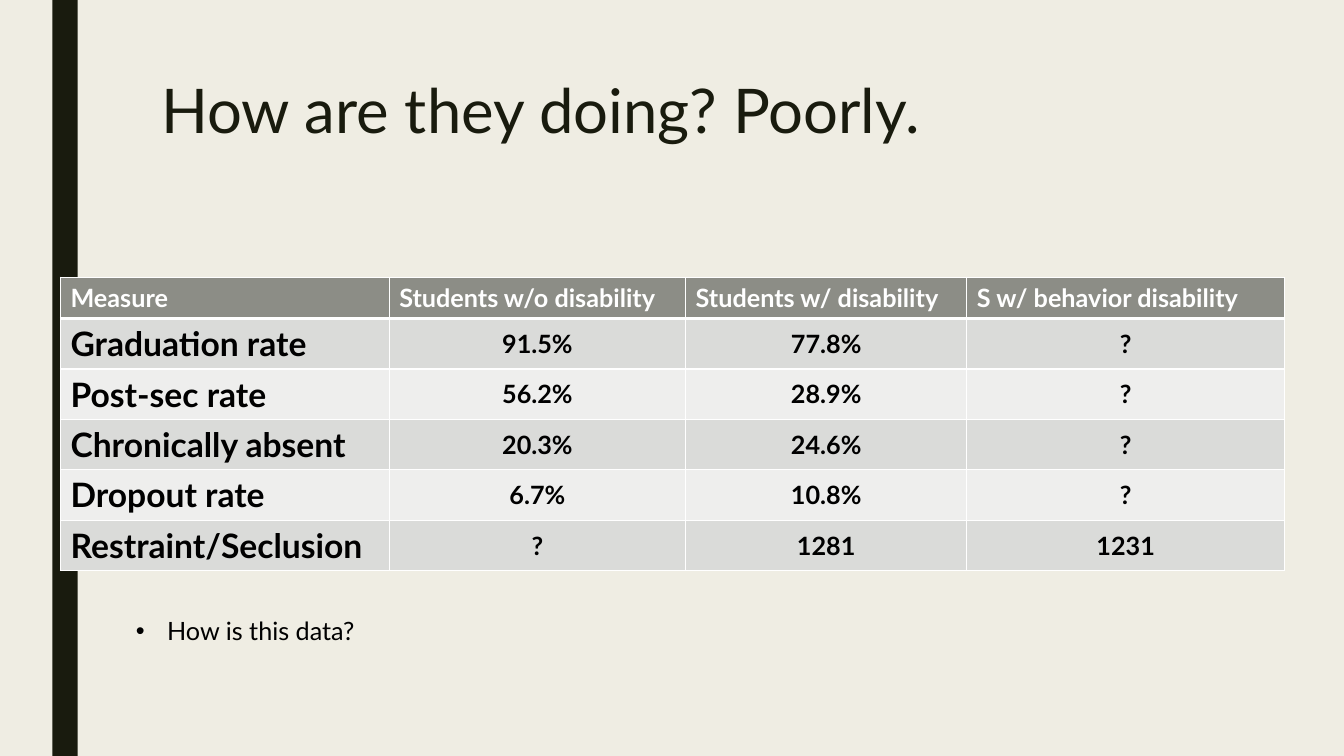
import pptx
import pptx.dml.color
import pptx.enum.shapes
import pptx.enum.text
import pptx.oxml
import pptx.oxml.ns
import pptx.util
from pptx.util import Inches

ANCHOR = pptx.enum.text.MSO_ANCHOR
ALIGN = pptx.enum.text.PP_ALIGN
INK = "191B0E"


def color(hex_string):
    return pptx.dml.color.RGBColor.from_string(hex_string)


def format_text(para, size, hex_string, bold=False):
    for span in para.runs:
        span.font.name = "Lato"
        span.font.size = pptx.util.Pt(size)
        span.font.bold = bold
        span.font.color.rgb = color(hex_string)


deck = pptx.Presentation()
deck.slide_width = Inches(13.33)
deck.slide_height = Inches(7.5)
page = deck.slides.add_slide(deck.slide_layouts[5])
page.background.fill.solid()
page.background.fill.fore_color.rgb = color("EFEDE3")

# Side bar
bar = page.shapes.add_shape(
    pptx.enum.shapes.MSO_SHAPE.RECTANGLE, Inches(0.52), 0, Inches(0.25), deck.slide_height)
bar.shadow.inherit = False
bar.fill.solid()
bar.fill.fore_color.rgb = color(INK)
bar.line.fill.background()

# Title
title = page.shapes.title
title.left, title.top = Inches(1.5), Inches(0.75)
title.width, title.height = Inches(10.5), Inches(1.62)
title.text_frame.text = "How are they doing? Poorly."
title.text_frame.vertical_anchor = ANCHOR.TOP
para = title.text_frame.paragraphs[0]
para.alignment = ALIGN.LEFT
para.line_spacing = 0.89
format_text(para, 44, INK)

# Table
rows = [
    ["Measure", "Students w/o disability", "Students w/ disability", "S w/ behavior disability"],
    ["Graduation rate", "91.5%", "77.8%", "?"],
    ["Post-sec rate", "56.2%", "28.9%", "?"],
    ["Chronically absent", "20.3%", "24.6%", "?"],
    ["Dropout rate", "6.7%", "10.8%", "?"],
    ["Restraint/Seclusion", "?", "1281", "1231"],
]
column_widths = [3.26, 2.94, 2.79, 3.15]
table = page.shapes.add_table(
    len(rows), len(column_widths), Inches(0.6), Inches(2.75), Inches(12.14), Inches(2.91)).table
for column, width in zip(table.columns, column_widths):
    column.width = Inches(width)

for r, row in enumerate(rows):
    is_header = r == 0
    table.rows[r].height = Inches(0.41 if is_header else 0.5)
    for c, text in enumerate(row):
        cell = table.cell(r, c)
        cell.text = text
        cell.fill.solid()
        cell.fill.fore_color.rgb = color("8C8D86" if is_header else ("EEEEED", "DADBD9")[r % 2])
        para = cell.text_frame.paragraphs[0]
        is_label = c == 0 and not is_header
        format_text(para, 24 if is_label else 18, "FFFFFF" if is_header else "000000", bold=True)
        if c > 0 and not is_header:
            para.alignment = ALIGN.CENTER
            cell.vertical_anchor = ANCHOR.MIDDLE

        # The rule under the header is three points wide, all others one
        properties = cell._tc.get_or_add_tcPr()
        for position, side in enumerate("LRTB"):
            thick = (r, side) in [(0, "B"), (1, "T")]
            border = pptx.oxml.parse_xml(
                f'<a:ln{side} {pptx.oxml.ns.nsdecls("a")} w="{pptx.util.Pt(3 if thick else 1)}">'
                '<a:solidFill><a:srgbClr val="FFFFFF"/></a:solidFill>'
                f'</a:ln{side}>')
            properties.insert(position, border)

# Question below the table
question = page.shapes.add_textbox(Inches(1.25), Inches(6.06), Inches(4.62), Inches(0.4))
question.text_frame.word_wrap = True
question.text_frame.auto_size = pptx.enum.text.MSO_AUTO_SIZE.SHAPE_TO_FIT_TEXT
question.text_frame.text = "How is this data?"
para = question.text_frame.paragraphs[0]
format_text(para, 18, "000000")
bullet_properties = para._p.get_or_add_pPr()
bullet_properties.set("marL", str(Inches(0.31)))
bullet_properties.set("indent", str(Inches(-0.31)))
for tag in ('buFont {} typeface="Arial"', 'buChar {} char="•"'):
    bullet_properties.append(
        pptx.oxml.parse_xml(f'<a:{tag.format(pptx.oxml.ns.nsdecls("a"))}/>'))

deck.save("out.pptx")
